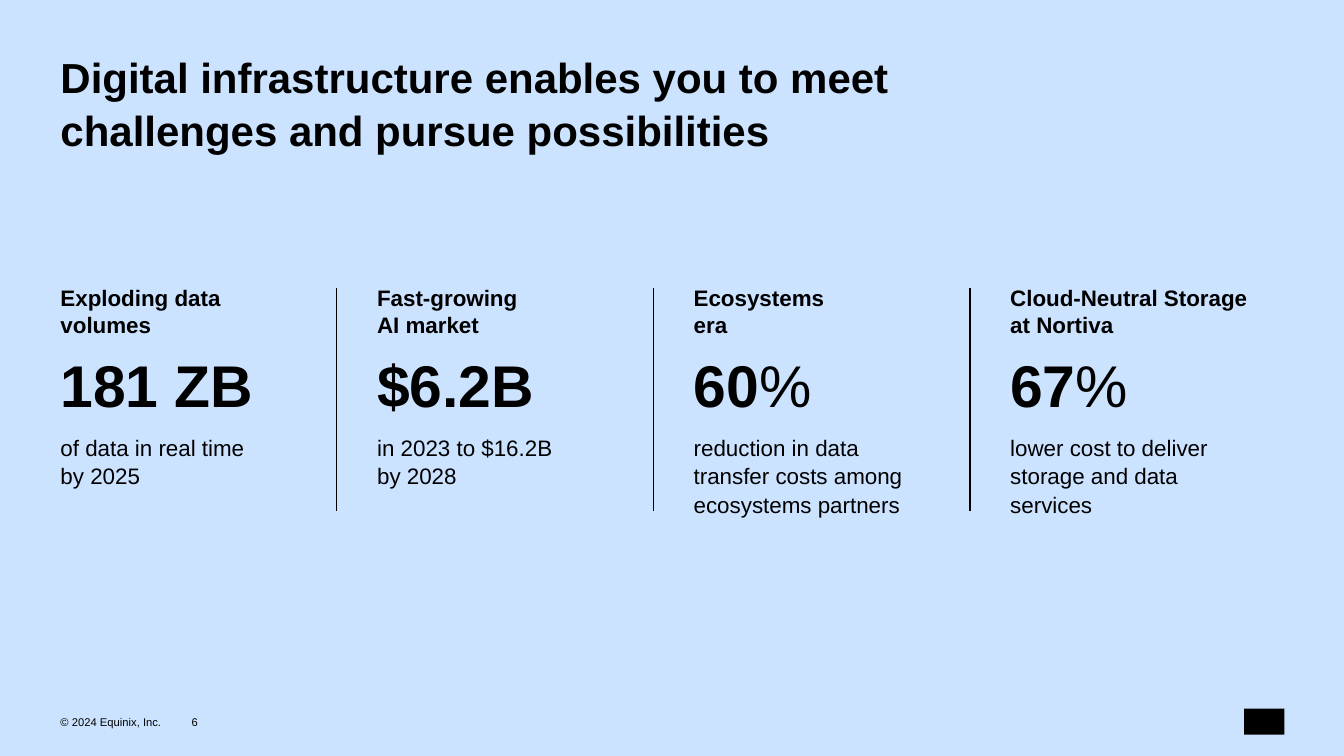
import pptx
import pptx.util
import pptx.dml.color
import pptx.enum.shapes
import pptx.enum.text
import pptx.oxml.ns
import lxml.etree

Inches = pptx.util.Inches
COLORS = {"ground": "CCE3FF", "ink": "000000"}
MARGIN = 0.6
COLUMN_PITCH = 3.14
STATS_TOP = 2.82

# Column width, heading lines, figure, unit in regular weight, explanation
STATS = [
    (2.08, ["Exploding data", "volumes"], "181 ZB", "", "of data in real time by 2025"),
    (1.92, ["Fast-growing", "AI market"], "$6.2B", "", "in 2023 to $16.2B by 2028"),
    (2.21, ["Ecosystems", "era"], "60", "%",
     "reduction in data transfer costs among ecosystems partners"),
    (2.5, ["Cloud-Neutral Storage", "at Nortiva"], "67", "%",
     "lower cost to deliver storage and data services"),
]


def add_span(para, text, size, bold=False):
    span = para.add_run()
    span.text = text
    span.font.name = "Arial"
    span.font.size = pptx.util.Pt(size)
    span.font.bold = bold
    span.font.color.rgb = pptx.dml.color.RGBColor.from_string(COLORS["ink"])


def prepare_frame(box):
    """Remove the insets, wrap the text and start it at the top left."""
    frame = box.text_frame
    frame.margin_left = frame.margin_right = frame.margin_top = frame.margin_bottom = 0
    frame.word_wrap = True
    frame.auto_size = pptx.enum.text.MSO_AUTO_SIZE.NONE
    frame.vertical_anchor = pptx.enum.text.MSO_ANCHOR.TOP
    frame.paragraphs[0].alignment = pptx.enum.text.PP_ALIGN.LEFT
    return frame


deck = pptx.Presentation()
deck.slide_width, deck.slide_height = Inches(13.33), Inches(7.5)
page = deck.slides.add_slide(deck.slide_layouts[5])
page.background.fill.solid()
page.background.fill.fore_color.rgb = pptx.dml.color.RGBColor.from_string(COLORS["ground"])

title = page.shapes.title
title.left, title.top = Inches(MARGIN), Inches(0.49)
title.width, title.height = Inches(9.41), Inches(1.54)
para = prepare_frame(title).paragraphs[0]
para.line_spacing = 1.05
add_span(para, "Digital infrastructure enables you to meet challenges and pursue possibilities", 30, True)

for column, (width, heading, figure, unit, explanation) in enumerate(STATS):
    left = MARGIN + column * COLUMN_PITCH
    box = page.shapes.add_textbox(Inches(left), Inches(STATS_TOP), Inches(width), Inches(2.3))
    frame = prepare_frame(box)

    para = frame.paragraphs[0]
    add_span(para, heading[0], 16, True)
    para.add_line_break()
    add_span(para, heading[1], 16, True)

    para = frame.add_paragraph()
    para.space_before = pptx.util.Pt(5)
    para.line_spacing = 1.05
    add_span(para, figure, 42, True)
    if unit:
        add_span(para, unit, 42)

    para = frame.add_paragraph()
    para.space_before = pptx.util.Pt(10)
    para.line_spacing = 1.05
    add_span(para, explanation, 16)

    if column:
        x = Inches(left - 0.4)
        divider = page.shapes.add_connector(
            pptx.enum.shapes.MSO_CONNECTOR.STRAIGHT, x, Inches(2.86), x, Inches(5.07))
        divider.line.color.rgb = pptx.dml.color.RGBColor.from_string(COLORS["ink"])
        divider.line.width = pptx.util.Pt(1)
        properties = divider.element.find(pptx.oxml.ns.qn("p:spPr"))
        lxml.etree.SubElement(properties, pptx.oxml.ns.qn("a:effectLst"))

for left, width, text in [(MARGIN, 1.2, "© 2024 Equinix, Inc."), (1.9, 0.5, "6")]:
    box = page.shapes.add_textbox(Inches(left), Inches(7.1), Inches(width), Inches(0.4))
    add_span(prepare_frame(box).paragraphs[0], text, 8)

emblem = page.shapes.add_shape(
    pptx.enum.shapes.MSO_SHAPE.RECTANGLE, Inches(12.34), Inches(7.03), Inches(0.4), Inches(0.26))
emblem.shadow.inherit = False
emblem.fill.solid()
emblem.fill.fore_color.rgb = pptx.dml.color.RGBColor.from_string(COLORS["ink"])
emblem.line.fill.background()

deck.save("out.pptx")
